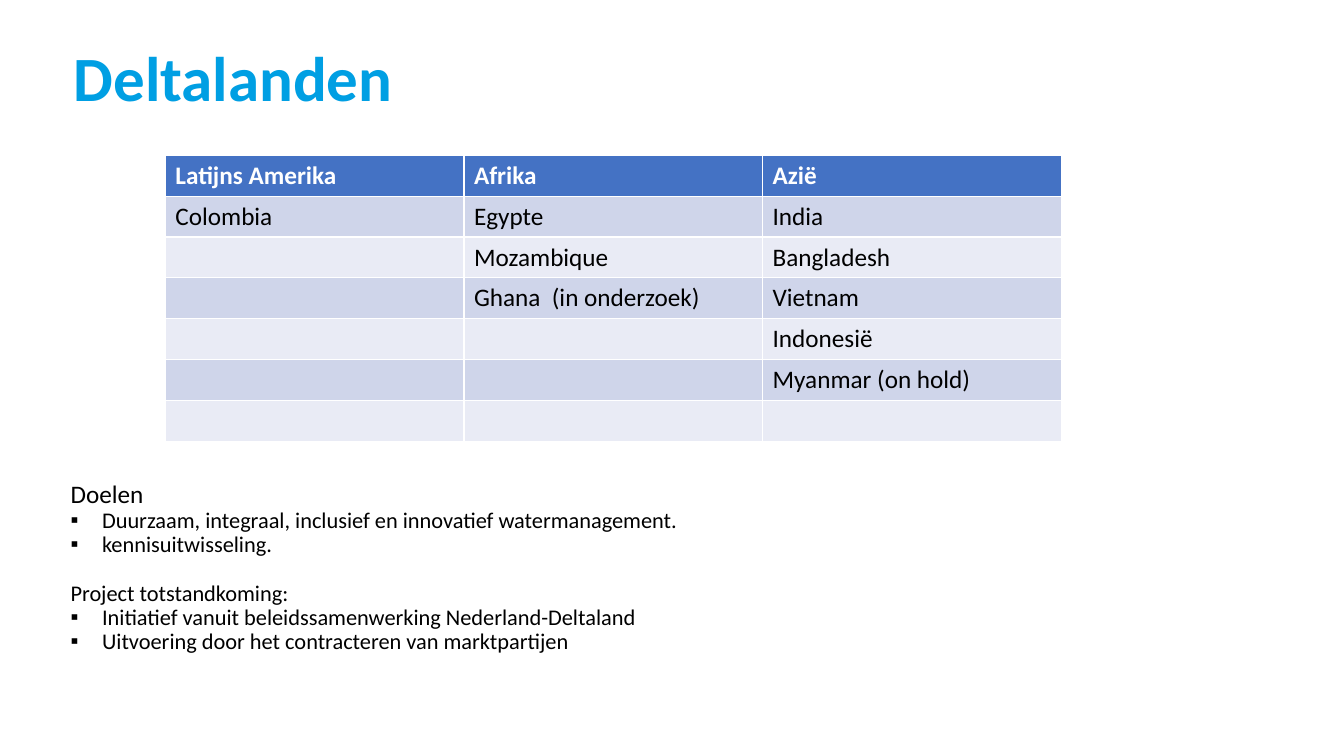
from lxml.etree import SubElement
from pptx import Presentation
from pptx.dml.color import RGBColor
from pptx.enum.text import MSO_ANCHOR, MSO_AUTO_SIZE, PP_ALIGN
from pptx.oxml.ns import qn
from pptx.util import Pt

FONT = "Calibri"
BLACK, WHITE = "000000", "FFFFFF"
TITLE_BLUE, HEADER_BLUE = "009FE3", "4472C4"
BAND_COLOURS = ["CFD5EA", "E9EBF5"]
REGIONS = {
    "Latijns Amerika": ["Colombia"],
    "Afrika": ["Egypte", "Mozambique", "Ghana  (in onderzoek)"],
    "Azië": ["India", "Bangladesh", "Vietnam", "Indonesië", "Myanmar (on hold)"],
}
ROW_COUNT = 7
COLUMN_WIDTH, ROW_HEIGHT = 213.33, 29.2
# Text, size, bulleted, space before
GOALS = [
    ("Doelen", 18, False, 0),
    ("Duurzaam, integraal, inclusief en innovatief watermanagement.", 16, True, 0),
    ("kennisuitwisseling.", 16, True, 0),
    ("Project totstandkoming:", 16, False, 17.6),
    ("Initiatief vanuit beleidssamenwerking Nederland-Deltaland", 16, True, 0),
    ("Uitvoering door het contracteren van marktpartijen", 16, True, 0),
]


def colour(hex_string):
    return RGBColor.from_string(hex_string)


def format_runs(paragraph, size, hex_string, bold=False):
    for run in paragraph.runs:
        run.font.name = FONT
        run.font.size = Pt(size)
        run.font.bold = bold
        run.font.color.rgb = colour(hex_string)


def place(shape, left, top, width, height, anchor):
    """Move a placeholder and remove its text margins and autofit."""
    shape.left, shape.top = Pt(left), Pt(top)
    shape.width, shape.height = Pt(width), Pt(height)
    frame = shape.text_frame
    frame.margin_left = frame.margin_top = Pt(0)
    frame.margin_right = frame.margin_bottom = Pt(0)
    frame.vertical_anchor = anchor
    frame.auto_size = MSO_AUTO_SIZE.NONE
    frame.word_wrap = True


def set_bullet(paragraph, bulleted):
    properties = paragraph._p.get_or_add_pPr()
    indent = Pt(22.5) if bulleted else 0
    properties.set("marL", str(indent))
    properties.set("indent", str(-indent))
    if bulleted:
        SubElement(properties, qn("a:buFont"), typeface="Arial")
        SubElement(properties, qn("a:buChar"), char="▪")
    else:
        SubElement(properties, qn("a:buNone"))


def fill_title(title):
    place(title, 52.6, 11.5, 841.7, 85.7, MSO_ANCHOR.MIDDLE)
    title.text_frame.text = "Deltalanden"
    paragraph = title.text_frame.paragraphs[0]
    paragraph.alignment = PP_ALIGN.LEFT
    format_runs(paragraph, 45, TITLE_BLUE, bold=True)


def fill_goals(body):
    place(body, 50.4, 344, 731.5, 143, MSO_ANCHOR.TOP)
    frame = body.text_frame
    frame.text = "\n".join(text for text, *_ in GOALS)
    for paragraph, (_, size, bulleted, space) in zip(frame.paragraphs, GOALS):
        paragraph.line_spacing = 0.9
        paragraph.space_before = Pt(space)
        paragraph.space_after = Pt(0)
        set_bullet(paragraph, bulleted)
        format_runs(paragraph, size, BLACK)


def fill_cell(cell, text, fill, text_colour, bold):
    cell.fill.solid()
    cell.fill.fore_color.rgb = colour(fill)
    paragraph = cell.text_frame.paragraphs[0]
    paragraph.font.size = Pt(18)
    if text:
        paragraph.text = text
        format_runs(paragraph, 18, text_colour, bold)


def add_region_table(slide):
    table = slide.shapes.add_table(
        ROW_COUNT, len(REGIONS), Pt(118.1), Pt(110.9),
        Pt(COLUMN_WIDTH * len(REGIONS)), Pt(ROW_HEIGHT * ROW_COUNT)).table
    for row in table.rows:
        row.height = Pt(ROW_HEIGHT)
    for column, (region, countries) in enumerate(REGIONS.items()):
        table.columns[column].width = Pt(COLUMN_WIDTH)
        fill_cell(table.cell(0, column), region, HEADER_BLUE, WHITE, True)
        for row in range(1, ROW_COUNT):
            country = countries[row - 1] if row <= len(countries) else ""
            band = BAND_COLOURS[(row - 1) % 2]
            fill_cell(table.cell(row, column), country, band, BLACK, False)


def main():
    presentation = Presentation()
    presentation.slide_width, presentation.slide_height = Pt(960), Pt(540)
    slide = presentation.slides.add_slide(presentation.slide_layouts[1])
    fill_title(slide.shapes.title)
    fill_goals(slide.placeholders[1])
    add_region_table(slide)
    presentation.save("out.pptx")


if __name__ == "__main__":
    main()
